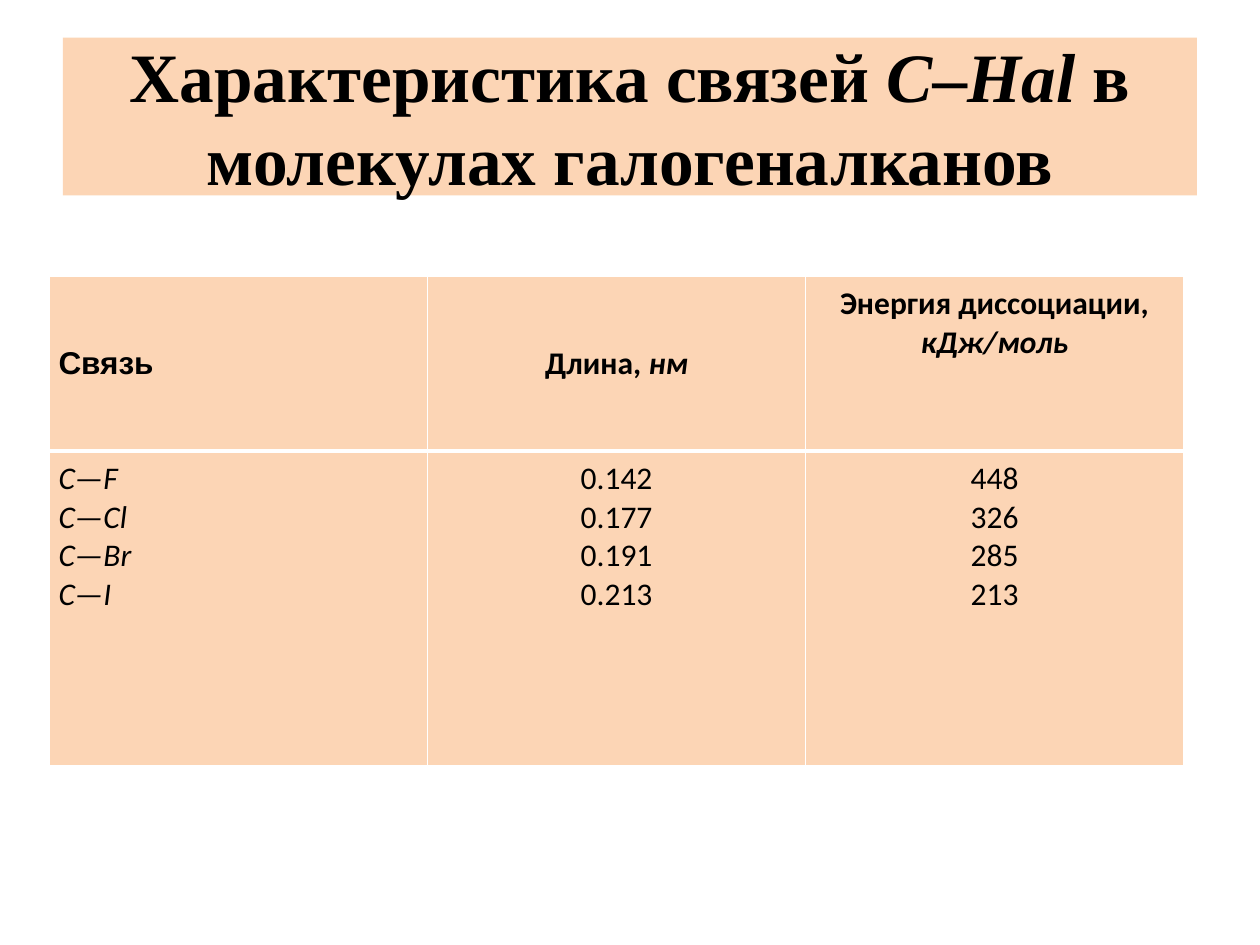
import pptx
import pptx.util
import pptx.dml.color
import pptx.enum.text
import pptx.oxml
import pptx.oxml.ns

Cm, Pt = pptx.util.Cm, pptx.util.Pt
ALIGN, ANCHOR = pptx.enum.text.PP_ALIGN, pptx.enum.text.MSO_ANCHOR

PEACH, BLACK, WHITE = "FCD5B5", "000000", "FFFFFF"

HEADING = [("Характеристика связей ", False), ("C–Hal ", True),
           ("в молекулах галогеналканов", False)]
COLUMNS = [
    {"head": [("Связь", False)], "font": "Arial", "anchor": ANCHOR.MIDDLE,
     "values": ["C—F", "C—Cl", "C—Br", "C—I"], "italic": True, "align": ALIGN.LEFT},
    {"head": [("Длина, ", False), ("нм", True)], "font": "Calibri", "anchor": ANCHOR.MIDDLE,
     "values": ["0.142", "0.177", "0.191", "0.213"], "italic": False, "align": ALIGN.CENTER},
    {"head": [("Энергия диссоциации, ", False), ("кДж/моль", True)], "font": "Calibri",
     "anchor": ANCHOR.TOP,
     "values": ["448", "326", "285", "213"], "italic": False, "align": ALIGN.CENTER},
]
ROW_HEIGHTS = [Cm(3.53), Cm(6.35)]
COLUMN_WIDTH = Cm(7.62)
CELL_FORMAT = {"margin_left": Cm(0.18), "margin_right": Cm(0.18),
               "margin_top": Cm(0.18), "margin_bottom": Cm(0.18)}
BORDERS = [{"L": 1, "R": 1, "T": 1, "B": 3}, {"L": 1, "R": 1, "T": 3, "B": 1}]


def color(value):
    return pptx.dml.color.RGBColor.from_string(value)


def apply(target, values):
    for name, value in values.items():
        setattr(target, name, value)


def paint(fill, value):
    fill.solid()
    fill.fore_color.rgb = color(value)


def write(frame, lines, align, size, font, bold):
    for number, line in enumerate(lines):
        paragraph = frame.add_paragraph() if number else frame.paragraphs[0]
        paragraph.alignment = align
        for words, italic in line:
            run = paragraph.add_run()
            run.text = words
            apply(run.font, {"name": font, "size": Pt(size), "bold": bold, "italic": italic})
            run.font.color.rgb = color(BLACK)


def draw_borders(cell, widths):
    properties = cell._tc.get_or_add_tcPr()
    for position, (side, width) in enumerate(widths.items()):
        properties.insert(position, pptx.oxml.parse_xml(
            f'<a:ln{side} {pptx.oxml.ns.nsdecls("a")} w="{Pt(width)}"><a:solidFill>'
            f'<a:srgbClr val="{WHITE}"/></a:solidFill></a:ln{side}>'))


def main():
    deck = pptx.Presentation()
    apply(deck, {"slide_width": Cm(25.4), "slide_height": Cm(19.05)})
    slide = deck.slides.add_slide(deck.slide_layouts[6])

    heading = slide.shapes.add_textbox(Cm(1.27), Cm(0.76), Cm(22.86), Cm(3.18))
    paint(heading.fill, PEACH)
    apply(heading.text_frame, {"word_wrap": True, "vertical_anchor": ANCHOR.MIDDLE})
    write(heading.text_frame, [HEADING], ALIGN.CENTER, 39.6, "Times New Roman", True)

    bonds = slide.shapes.add_table(
        len(ROW_HEIGHTS), len(COLUMNS), Cm(1), Cm(5.56),
        COLUMN_WIDTH * len(COLUMNS), sum(ROW_HEIGHTS)).table
    for row, height in zip(bonds.rows, ROW_HEIGHTS):
        row.height = height
    for index, column in enumerate(COLUMNS):
        bonds.columns[index].width = COLUMN_WIDTH
        values = [[(value, column["italic"])] for value in column["values"]]
        parts = [([column["head"]], column["font"], True, column["anchor"]),
                 (values, "Calibri", False, ANCHOR.TOP)]
        for level, (lines, font, bold, anchor) in enumerate(parts):
            cell = bonds.cell(level, index)
            apply(cell, {**CELL_FORMAT, "vertical_anchor": anchor})
            paint(cell.fill, PEACH)
            draw_borders(cell, BORDERS[level])
            write(cell.text_frame, lines, column["align"], 18, font, bold)

    deck.save("out.pptx")


if __name__ == "__main__":
    main()
